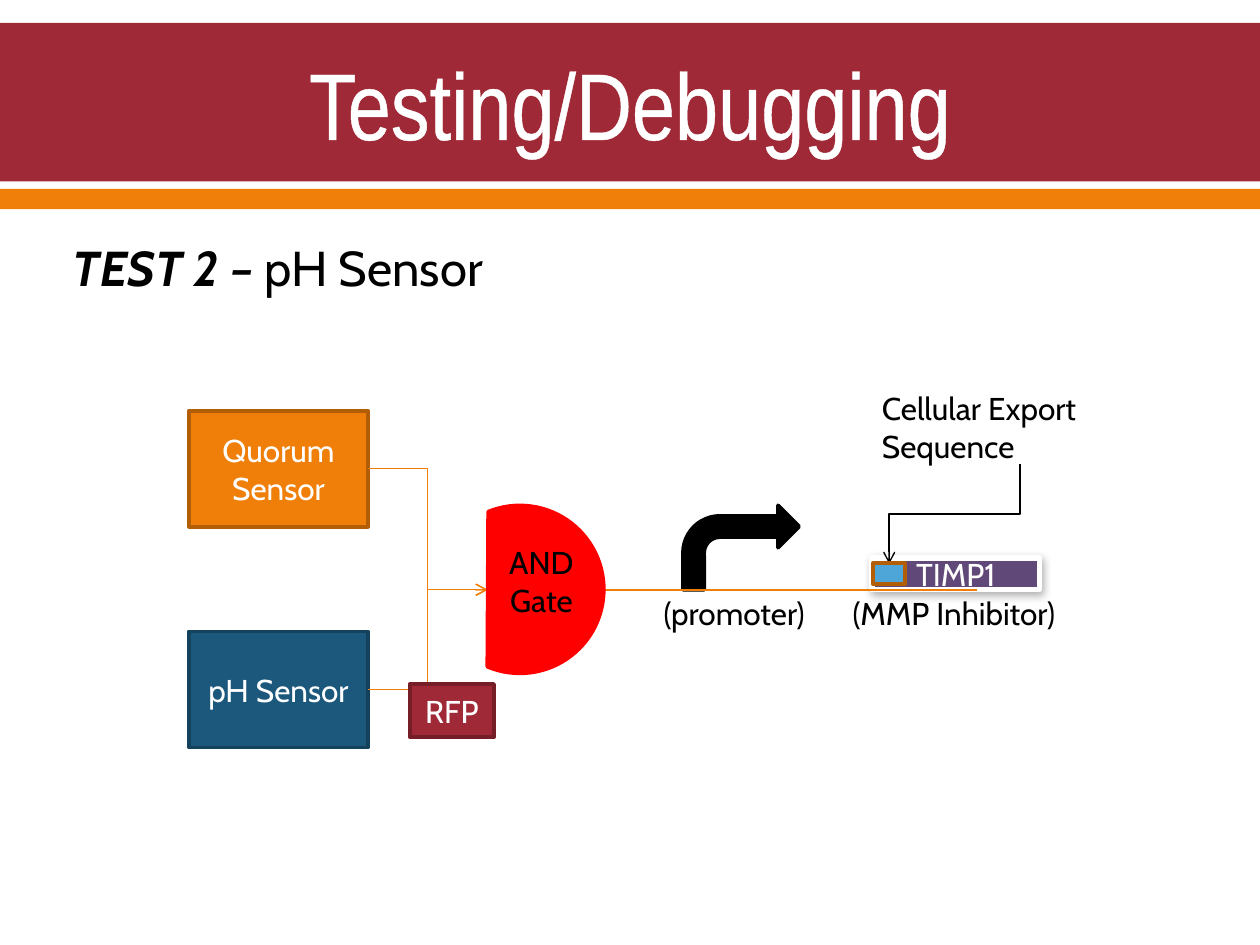
import pptx
import pptx.dml.color
import pptx.enum.shapes
import pptx.enum.text
import pptx.oxml
import pptx.oxml.ns
import pptx.util
from lxml import etree

Cm, Pt = pptx.util.Cm, pptx.util.Pt
RGBColor = pptx.dml.color.RGBColor
Shape = pptx.enum.shapes.MSO_SHAPE
Link = pptx.enum.shapes.MSO_CONNECTOR
Align = pptx.enum.text.PP_ALIGN
Anchor = pptx.enum.text.MSO_ANCHOR
qn = pptx.oxml.ns.qn

WHITE = RGBColor(0xFF, 0xFF, 0xFF)
BLACK = RGBColor(0x00, 0x00, 0x00)
RED = RGBColor(0xFF, 0x00, 0x00)
CRIMSON = RGBColor(0x9F, 0x29, 0x36)
DARK_CRIMSON = RGBColor(0x76, 0x1E, 0x28)
ORANGE = RGBColor(0xF0, 0x7F, 0x09)
DARK_ORANGE = RGBColor(0xB2, 0x5E, 0x07)
BLUE = RGBColor(0x1B, 0x58, 0x7C)
DARK_BLUE = RGBColor(0x14, 0x41, 0x5C)
SKY = RGBColor(0x4E, 0xA5, 0xD8)
PURPLE = RGBColor(0x60, 0x48, 0x78)

OUTLINE = (
    f'<a:ln {pptx.oxml.ns.nsdecls("a")} w="13970"><a:solidFill>'
    '<a:srgbClr val="FFFFFF"/></a:solidFill></a:ln>'
)
SHADOW = (
    f'<a:effectLst {pptx.oxml.ns.nsdecls("a")}>'
    '<a:outerShdw blurRad="63500" dist="25400" dir="3600000" rotWithShape="0">'
    '<a:srgbClr val="000000"><a:alpha val="30000"/></a:srgbClr>'
    '</a:outerShdw></a:effectLst>'
)


class Painter:
    """Holds the text style and the current page; all lengths are in cm."""

    def __init__(self, page):
        self.page = page
        self.font = {"name": "Cabin", "size": Pt(18), "bold": False, "italic": False}
        self.border = 2.22
        self.wire = 0.79

    def fill_text(self, box, lines, color, align, anchor, **changes):
        """Each line is a list of (text, font changes) spans."""
        frame = box.text_frame
        frame.word_wrap = True
        frame.vertical_anchor = anchor
        for number, line in enumerate(lines):
            para = frame.paragraphs[0] if number == 0 else frame.add_paragraph()
            para.alignment = align
            for text, extra in line:
                span = para.add_run()
                span.text = text
                for key, value in {**self.font, **changes, **extra}.items():
                    setattr(span.font, key, value)
                span.font.color.rgb = color

    def title(self, place, text):
        box = self.page.shapes.title
        for key, value in zip(("left", "top", "width", "height"), place):
            setattr(box, key, Cm(value))
        self.fill_text(box, [[(text, {})]], WHITE, Align.CENTER, Anchor.MIDDLE,
                       name="Arial Narrow", size=Pt(54))
        properties = box.text_frame.paragraphs[0].runs[0]._r.get_or_add_rPr()
        properties.insert(0, pptx.oxml.parse_xml(OUTLINE))

    def label(self, place, *lines, align=Align.LEFT, **changes):
        box = self.page.shapes.add_textbox(*map(Cm, place))
        self.fill_text(box, lines, BLACK, align, Anchor.TOP, **changes)

    def shape(self, kind, place, fill, line=None, text=None, width=None, turn=0):
        box = self.page.shapes.add_shape(kind, *map(Cm, place))
        box.shadow.inherit = False
        box.rotation = turn
        box.fill.solid()
        box.fill.fore_color.rgb = fill
        if line is None:
            box.line.fill.background()
        else:
            box.line.color.rgb = line
            box.line.width = Pt(width or self.border)
        if text:
            self.fill_text(box, [[(text, {})]], WHITE, Align.CENTER, Anchor.MIDDLE)
        return box

    def connect(self, kind, start, end, color, arrow=False, turn=0):
        wire = self.page.shapes.add_connector(kind, *map(Cm, start + end))
        wire.line.color.rgb = color
        wire.line.width = Pt(self.wire)
        properties = wire._element.spPr
        if turn:
            properties.find(qn("a:xfrm")).set("rot", str(turn * 60000))
        if arrow:
            etree.SubElement(properties.find(qn("a:ln")), qn("a:tailEnd"), type="arrow")
        etree.SubElement(properties, qn("a:effectLst"))


def main():
    deck = pptx.Presentation()
    deck.slide_width, deck.slide_height = Cm(25.4), Cm(19.05)
    page = deck.slides.add_slide(deck.slide_layouts[5])
    paint = Painter(page)

    # Header bands, placed behind the title
    bands = [
        paint.shape(Shape.RECTANGLE, (0, 0.46, 25.4, 3.2), CRIMSON),
        paint.shape(Shape.RECTANGLE, (0, 3.81, 25.4, 0.41), ORANGE),
    ]
    for band in bands:
        page.shapes.title._element.addprevious(band._element)
    paint.title((1.27, 0.51, 22.86, 3.1), "Testing/Debugging")

    # Heading and export note
    paint.label((17.53, 7.72, 6.81, 1.8), [("Cellular Export Sequence", {})])
    paint.label((1.22, 4.67, 15.49, 1.45),
                [("TEST 2 – ", {"bold": True, "italic": True}), ("pH Sensor", {})],
                size=Pt(28))

    # Sensors, gene and promoter arrow
    axis = 11.89
    gate_left = 9.83
    left, width, height = 3.81, 3.61, 2.34
    sensors = [
        ("Quorum Sensor", 8.28, ORANGE, DARK_ORANGE),
        ("pH Sensor", 12.73, BLUE, DARK_BLUE),
    ]
    for text, top, fill, line in sensors:
        paint.shape(Shape.RECTANGLE, (left, top, width, height), fill, line, text)
    gene = paint.shape(Shape.RECTANGLE, (17.58, 11.25, 3.38, 0.64), PURPLE, WHITE,
                       "TIMP1", width=3)
    effects = gene._element.spPr.find(qn("a:effectLst"))
    effects.getparent().replace(effects, pptx.oxml.parse_xml(SHADOW))
    paint.shape(Shape.BENT_ARROW, (13.77, 10.19, 2.34, 1.7), BLACK, BLACK)

    # Wires from the sensors, through the gate, to the gene
    for _, top, _, _ in sensors:
        paint.connect(Link.ELBOW, (left + width, top + height / 2), (gate_left, axis),
                      ORANGE, arrow=True)
    for start, end in ((13.97, 19.69), (gate_left, 13.97)):
        paint.connect(Link.STRAIGHT, (start, axis), (end, axis), ORANGE)

    # AND gate and reporter
    paint.shape(Shape.CHORD, (8.79, 10.19, 3.38, 3.38), RED, RED, turn=202.8)
    paint.label((9.96, 10.82, 1.91, 1.8), [("AND", {})], [("Gate", {})],
                align=Align.CENTER)
    paint.shape(Shape.RECTANGLE, (8.26, 13.79, 1.7, 1.07), CRIMSON, DARK_CRIMSON, "RFP")

    # Export sequence marker and captions
    paint.connect(Link.ELBOW, (18.24, 9.04), (20.25, 11.68), BLACK, arrow=True, turn=90)
    paint.shape(Shape.RECTANGLE, (17.6, 11.35, 0.64, 0.43), SKY, DARK_ORANGE)
    paint.label((13.13, 11.86, 3.71, 1.02), [("(promoter)", {})])
    paint.label((16.94, 11.86, 5.72, 1.02), [("(MMP Inhibitor)", {})])

    deck.save("out.pptx")


if __name__ == "__main__":
    main()
